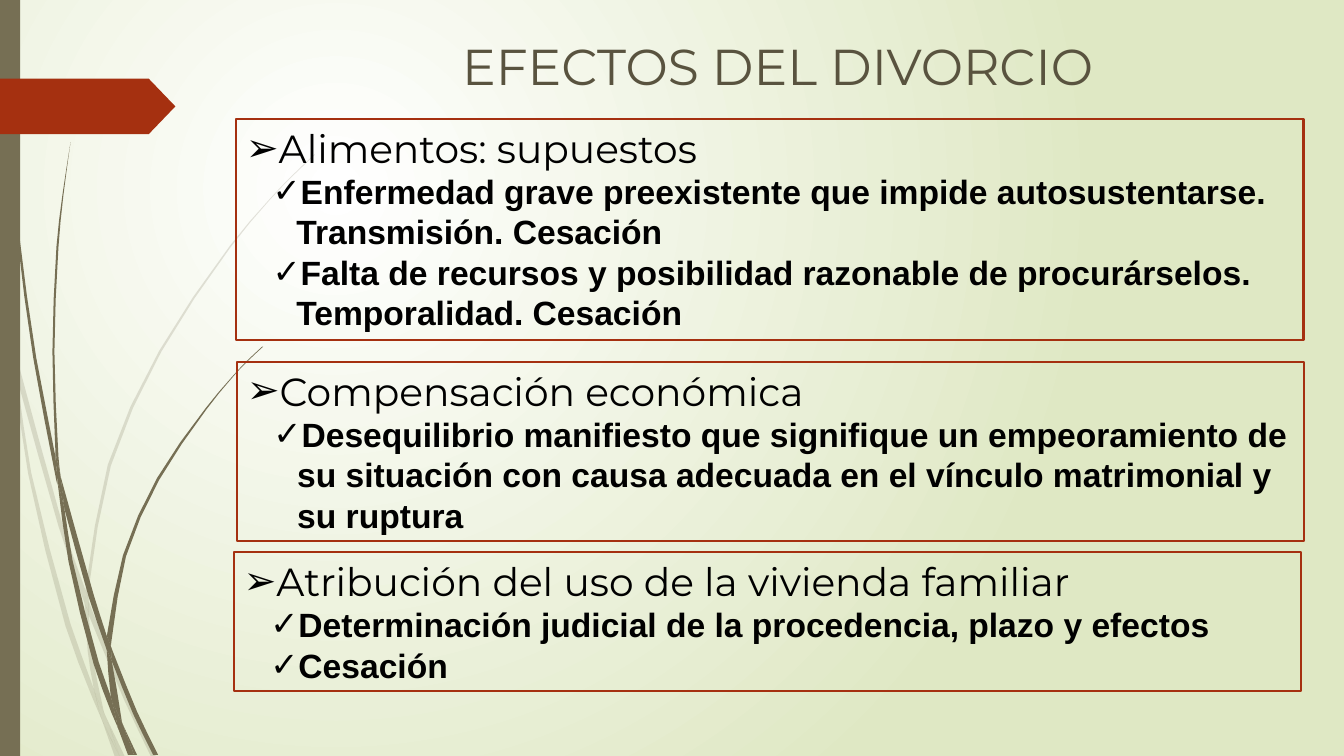
import math

import pptx
import pptx.dml.color
import pptx.enum.shapes
import pptx.enum.text
import pptx.oxml.ns
import pptx.util
from lxml import etree

Pt = pptx.util.Pt
PRESET = pptx.enum.shapes.MSO_SHAPE
qn = pptx.oxml.ns.qn

COLORS = {
    "white": "FFFFFF",
    "pale_green": "DFE8C4",
    "olive": "766F54",
    "title": "59533F",
    "rust": "A53010",
    "text": "000000",
}

# Each blade of grass is one edge going down and one going back up.
BLADE_UNIT = Pt(0.72)
PRECISION = 100
PALE_BLADES = [
    ([(0, 282), (9, 322), (11, 350)], [(10, 344), (0, 299)]),
    ([(14, 345), (62, 520), (85, 586)], [(84, 599), (58, 522), (17, 376)]),
    ([(88, 596), (92, 607), (127, 692), (155, 751)],
     [(150, 751), (123, 694), (88, 610)]),
    ([(105, 711), (124, 751)], [(119, 751), (105, 711)]),
    ([(11, 350), (17, 376), (31, 469), (70, 619), (93, 683), (99, 707),
      (101, 714)],
     [(92, 693), (65, 621), (28, 470), (11, 350)]),
    ([(84, 599), (88, 608), (91, 646), (103, 706), (105, 711)],
     [(96, 692), (93, 683), (87, 646), (84, 599)]),
    ([(312, 154), (290, 175), (268, 198), (229, 245), (160, 349), (110, 462),
      (88, 584), (88, 596)],
     [(85, 586), (85, 584), (107, 461), (158, 348), (228, 244), (268, 197),
      (289, 175), (312, 153)]),
    ([(101, 714), (119, 751)], [(114, 751), (101, 714)]),
    ([(85, 586), (88, 596), (88, 610)], [(88, 608), (84, 599)]),
    ([(93, 683), (96, 692), (105, 711), (119, 751)],
     [(119, 751), (101, 714), (99, 707), (93, 683)]),
]
DARK_BLADES = [
    ([(4, 0), (5, 48), (8, 109), (19, 232), (36, 355), (55, 453), (57, 481)],
     [(56, 477), (33, 355), (17, 233), (7, 110), (4, 48), (3, 0)]),
    ([(60, 472), (93, 590), (106, 631)], [(106, 645), (88, 592), (64, 505)]),
    ([(110, 641), (113, 649), (136, 706), (157, 749)],
     [(152, 749), (132, 708), (111, 656)]),
    ([(57, 477), (64, 505), (72, 556), (98, 657), (110, 691), (116, 717),
      (117, 722)],
     [(111, 708), (93, 659), (68, 557), (57, 477)]),
    ([(70, 141), (63, 193), (58, 245), (54, 349), (58, 453), (60, 472)],
     [(55, 449), (52, 349), (56, 245), (62, 193), (70, 141)]),
    ([(122, 719), (136, 749)], [(133, 749), (122, 719)]),
    ([(55, 449), (60, 472), (64, 505)], [(57, 477), (55, 453)]),
    ([(261, 344), (245, 359), (231, 374), (205, 406), (158, 476), (125, 552),
      (111, 633), (110, 641)],
     [(106, 631), (122, 551), (156, 474), (204, 405), (231, 373), (245, 358),
      (260, 344)]),
    ([(117, 722), (131, 749)], [(127, 749), (117, 722)]),
    ([(106, 645), (111, 656), (121, 716), (122, 719)],
     [(116, 706), (110, 691), (106, 645)]),
    ([(106, 631), (110, 641), (111, 656)], [(109, 651), (106, 645)]),
    ([(110, 691), (116, 706), (122, 719), (133, 749)],
     [(130, 749), (117, 722), (116, 717), (110, 691)]),
]

# left, top, height, heading, details
TOPICS = [
    (168.6, 85, 157.7, "Alimentos: supuestos", [
        "Enfermedad grave preexistente que impide autosustentarse. "
        "Transmisión. Cesación",
        "Falta de recursos y posibilidad razonable de procurárselos. "
        "Temporalidad. Cesación"]),
    (169.2, 258.5, 128.2, "Compensación económica", [
        "Desequilibrio manifiesto que signifique un empeoramiento de su "
        "situación con causa adecuada en el vínculo matrimonial y su ruptura"]),
    (167, 394.4, 99.2, "Atribución del uso de la vivienda familiar", [
        "Determinación judicial de la procedencia, plazo y efectos",
        "Cesación"]),
]
TOPIC_WIDTH = 762.5


def paint_background(slide):
    """Radial gradient with its light centre at the upper left."""
    fill = slide.background.fill
    fill.gradient()
    for stop, name in zip(fill.gradient_stops, ("white", "pale_green")):
        stop.color.rgb = rgb(name)
    gradient = slide.element.find(".//" + qn("a:gradFill"))
    gradient.remove(gradient.find(qn("a:lin")))
    circle = etree.SubElement(gradient, qn("a:path"), path="circle")
    etree.SubElement(circle, qn("a:fillToRect"),
                     l="50000", t="50000", r="100000", b="100000")


def rgb(name):
    return pptx.dml.color.RGBColor.from_string(COLORS[name])


def smooth(knots):
    """The knots, with a point of a smooth curve halfway between each two."""
    times = [0]
    for start, end in zip(knots, knots[1:]):
        times.append(times[-1] + math.dist(start, end))
    slopes = []
    for i in range(len(knots)):
        before, after = max(i - 1, 0), min(i + 1, len(knots) - 1)
        span = times[after] - times[before]
        slopes.append([(b - a) / span
                       for a, b in zip(knots[before], knots[after])])
    points = [knots[0]]
    for i in range(len(knots) - 1):
        length = times[i + 1] - times[i]
        points.append(tuple(
            (knots[i][k] + knots[i + 1][k]) / 2
            + length * (slopes[i][k] - slopes[i + 1][k]) / 8
            for k in (0, 1)))
        points.append(knots[i + 1])
    return points


def fill_plain(shape, color):
    shape.shadow.inherit = False
    shape.fill.solid()
    shape.fill.fore_color.rgb = rgb(color)
    shape.line.fill.background()


def add_grass(slide, blades, opacity=100):
    grass = slide.shapes.add_group_shape()
    for down, up in blades:
        outline = [(x * PRECISION, y * PRECISION)
                   for x, y in smooth(down) + smooth(up)]
        builder = grass.shapes.build_freeform(
            *outline[0], scale=BLADE_UNIT / PRECISION)
        builder.add_line_segments(outline[1:], close=True)
        blade = builder.convert_to_shape()
        fill_plain(blade, "olive")
        if opacity < 100:
            tint = blade.element.spPr.find(
                qn("a:solidFill") + "/" + qn("a:srgbClr"))
            etree.SubElement(tint, qn("a:alpha"), val=str(opacity * 1000))


def add_block(slide, preset, left, top, width, height, color):
    block = slide.shapes.add_shape(
        preset, Pt(left), Pt(top), Pt(width), Pt(height))
    fill_plain(block, color)
    return block


def add_run(paragraph, text, size, font, color, bold=False):
    run = paragraph.add_run()
    run.text = text
    run.font.size = Pt(size)
    run.font.name = font
    run.font.bold = bold
    run.font.color.rgb = rgb(color)


def add_title(slide, text):
    title = slide.shapes.add_textbox(Pt(204.5), Pt(21.6), Pt(702), Pt(59.8))
    title.text_frame.word_wrap = True
    line = title.text_frame.paragraphs[0]
    line.alignment = pptx.enum.text.PP_ALIGN.CENTER
    add_run(line, text, 36, "Montserrat", "title")


def set_bullet(paragraph, symbol, margin=0, indent=0):
    paragraph.alignment = pptx.enum.text.PP_ALIGN.LEFT
    properties = paragraph._p.get_or_add_pPr()
    properties.set("marL", str(Pt(margin)))
    properties.set("indent", str(Pt(indent)))
    etree.SubElement(properties, qn("a:buFont"), typeface="Arial")
    etree.SubElement(properties, qn("a:buChar"), char=symbol)


def add_topic(slide, left, top, height, heading, details):
    topic = slide.shapes.add_shape(
        PRESET.RECTANGLE, Pt(left), Pt(top), Pt(TOPIC_WIDTH), Pt(height))
    topic.shadow.inherit = False
    topic.fill.background()
    topic.line.color.rgb = rgb("rust")
    topic.line.width = Pt(1.5)
    frame = topic.text_frame
    frame.word_wrap = True
    frame.vertical_anchor = pptx.enum.text.MSO_ANCHOR.TOP
    set_bullet(frame.paragraphs[0], "➢")
    add_run(frame.paragraphs[0], heading, 28, "Montserrat", "text")
    for detail in details:
        line = frame.add_paragraph()
        line.level = 1
        set_bullet(line, "✓", margin=36, indent=-17)
        add_run(line, detail, 24, "Arial", "text", bold=True)


def main():
    deck = pptx.Presentation()
    deck.slide_width, deck.slide_height = Pt(960), Pt(540)
    slide = deck.slides.add_slide(deck.slide_layouts[6])
    paint_background(slide)
    add_grass(slide, PALE_BLADES, opacity=20)
    add_grass(slide, DARK_BLADES)
    add_block(slide, PRESET.RECTANGLE, 0, 0, 14.4, 540, "olive")
    arrow = add_block(slide, PRESET.PENTAGON, 0, 56.2, 125.3, 39.6, "rust")
    arrow.adjustments[0] = 0.48
    add_title(slide, "EFECTOS DEL DIVORCIO")
    for topic in TOPICS:
        add_topic(slide, *topic)
    deck.save("out.pptx")


if __name__ == "__main__":
    main()
